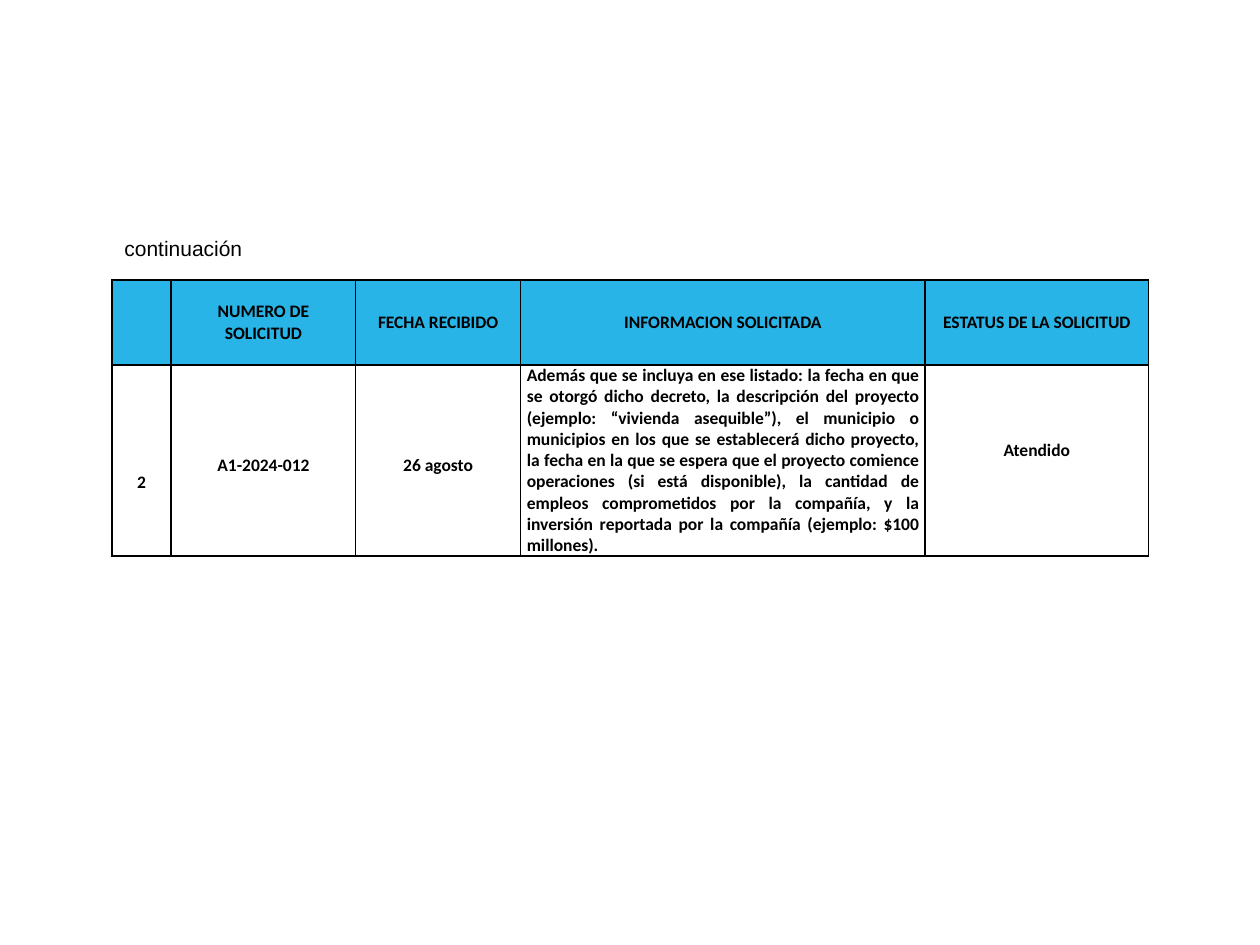
from dataclasses import dataclass

from lxml import etree
from pptx import Presentation
from pptx.dml.color import RGBColor
from pptx.enum.text import MSO_ANCHOR, PP_ALIGN
from pptx.oxml.ns import qn
from pptx.util import Cm, Pt

CENTER, JUSTIFY = PP_ALIGN.CENTER, PP_ALIGN.JUSTIFY
TOP, MIDDLE = MSO_ANCHOR.TOP, MSO_ANCHOR.MIDDLE
COLORS = {"header": "28B4E6", "body": "FFFFFF", "ink": "000000"}
COLUMN_WIDTHS = (1.19, 3.72, 3.32, 8.16, 4.5)
ROW_HEIGHTS = (1.72, 3.78)


@dataclass
class CellText:
    text: str
    fill: str = "body"
    align: int = CENTER
    anchor: int = MIDDLE
    spacing: float = 1.0
    top: float = 0
    bottom: float = 0


HEADERS = [
    CellText(text, fill="header")
    for text in (
        "",
        "NUMERO DE SOLICITUD",
        "FECHA RECIBIDO",
        "INFORMACION SOLICITADA",
        "ESTATUS DE LA SOLICITUD",
    )
]
REQUEST = [
    CellText("2", anchor=TOP, top=2.15),
    CellText("A1-2024-012", spacing=1.5),
    CellText("26 agosto", spacing=1.5),
    CellText(
        "Además que se incluya en ese listado: la fecha en que se otorgó dicho "
        "decreto, la descripción del proyecto (ejemplo: “vivienda asequible”), el "
        "municipio o municipios en los que se establecerá dicho proyecto, la fecha "
        "en la que se espera que el proyecto comience operaciones (si está "
        "disponible), la cantidad de empleos comprometidos por la compañía, y la "
        "inversión reportada por la compañía (ejemplo: $100 millones).",
        align=JUSTIFY,
    ),
    CellText("Atendido", spacing=1.5, bottom=0.64),
]


def rgb(name: str) -> RGBColor:
    return RGBColor.from_string(COLORS[name])


def style_font(font, name: str, size: float, bold: bool = False) -> None:
    font.name, font.size, font.bold = name, Pt(size), bold
    font.color.rgb = rgb("ink")


def add_borders(cell) -> None:
    """Draw all four edges; they must precede the fill in the cell properties."""
    tc_pr = cell._tc.get_or_add_tcPr()
    for i, side in enumerate(("a:lnL", "a:lnR", "a:lnT", "a:lnB")):
        ln = etree.Element(qn(side), w=str(Pt(1)))
        fill = etree.SubElement(ln, qn("a:solidFill"))
        etree.SubElement(fill, qn("a:srgbClr"), val=COLORS["ink"])
        tc_pr.insert(i, ln)


def fill_cell(cell, content: CellText) -> None:
    cell.fill.solid()
    cell.fill.fore_color.rgb = rgb(content.fill)
    cell.margin_left = cell.margin_right = Cm(0.13)
    cell.margin_top, cell.margin_bottom = Cm(content.top), Cm(content.bottom)
    cell.vertical_anchor = content.anchor
    p = cell.text_frame.paragraphs[0]
    p.text = content.text
    p.alignment, p.line_spacing = content.align, content.spacing
    style_font(p.font, "Calibri", 10, bold=True)
    for r in p.runs:
        style_font(r.font, "Calibri", 10, bold=True)
    add_borders(cell)


def add_request_table(s) -> None:
    rows = (HEADERS, REQUEST)
    table = s.shapes.add_table(
        len(rows), len(COLUMN_WIDTHS), Cm(2.26), Cm(5.64),
        Cm(sum(COLUMN_WIDTHS)), Cm(sum(ROW_HEIGHTS)),
    ).table
    for column, width in zip(table.columns, COLUMN_WIDTHS):
        column.width = Cm(width)
    for row, height, contents in zip(table.rows, ROW_HEIGHTS, rows):
        row.height = Cm(height)
        for cell, content in zip(row.cells, contents):
            fill_cell(cell, content)


def add_continuation_label(s) -> None:
    tf = s.shapes.add_textbox(Cm(2.26), Cm(4.62), Cm(4.98), Cm(0.77)).text_frame
    tf.word_wrap = True
    tf.text = "continuación"
    style_font(tf.paragraphs[0].runs[0].font, "Arial", 12)


def main() -> None:
    prs = Presentation()
    prs.slide_width, prs.slide_height = Cm(25.4), Cm(19.05)
    s = prs.slides.add_slide(prs.slide_layouts[6])
    add_request_table(s)
    add_continuation_label(s)
    prs.save("out.pptx")


if __name__ == "__main__":
    main()
